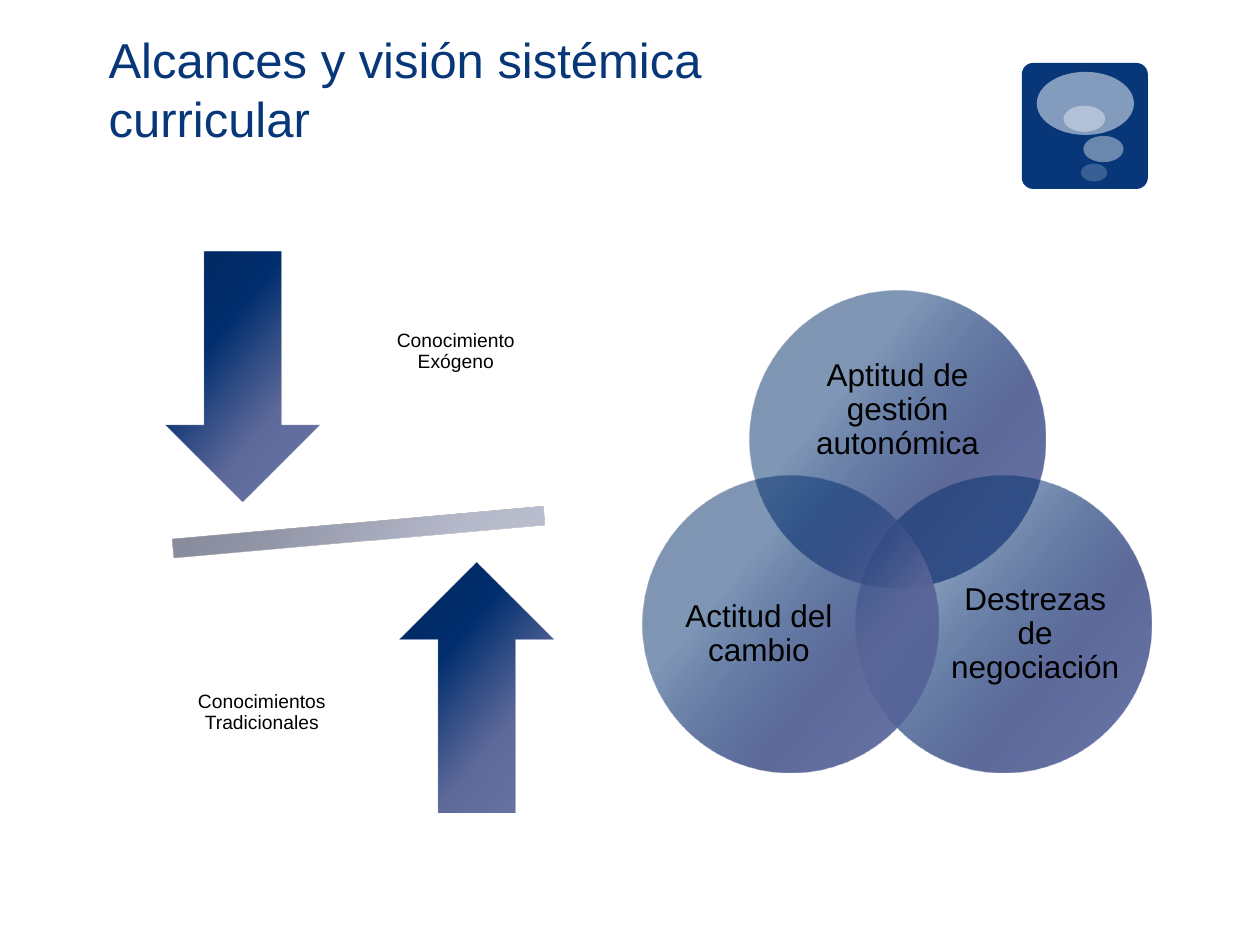
import pptx
import pptx.dml.color
import pptx.enum.shapes
import pptx.enum.text
import pptx.oxml
import pptx.oxml.ns
import pptx.util
from pptx.util import Cm

SHAPE = pptx.enum.shapes.MSO_SHAPE
ALIGN = pptx.enum.text.PP_ALIGN
ANCHOR = pptx.enum.text.MSO_ANCHOR

# Gradient stops: position, colour, opacity (all but the colour in percent)
BLUE = [(0, "52619B", 85), (33, "576396", 95), (67, "002E6E", 100), (100, "00285F", 100)]
GLASS = BLUE[:2] + [(67, "002E6E", 50), (100, "00285F", 50)]
GREY = [(0, "B2B6CA", 85), (33, "B4B7C8", 95), (67, "9094A5", 100), (100, "7C7F8F", 100)]


def rgb(value):
    return pptx.dml.color.RGBColor.from_string(value)


class Deck:
    font = "Arial"
    navy = "073779"
    black = "000000"
    gradient_angle = 220

    def __init__(self, width, height):
        self.prs = pptx.Presentation()
        self.prs.slide_width, self.prs.slide_height = Cm(width), Cm(height)
        self.slide = self.prs.slides.add_slide(self.prs.slide_layouts[5])

    def set_text(self, tf, text, size, color, align, anchor, insets):
        tf.word_wrap = True
        tf.auto_size = pptx.enum.text.MSO_AUTO_SIZE.NONE
        tf.vertical_anchor = anchor
        tf.margin_left, tf.margin_top, tf.margin_right, tf.margin_bottom = map(Cm, insets)
        p = tf.paragraphs[0]
        p.alignment = align
        r = p.add_run()
        r.text = text
        r.font.name, r.font.size = self.font, pptx.util.Pt(size)
        r.font.color.rgb = rgb(color)
        return p

    def title(self, text, *box):
        sp = self.slide.shapes.title
        sp.left, sp.top, sp.width, sp.height = map(Cm, box)
        self.set_text(sp.text_frame, text, 28, self.navy, ALIGN.LEFT, ANCHOR.BOTTOM,
                      (0.13, 0.13, 0.25, 0.13))

    def label(self, text, size, inset, *box):
        sp = self.slide.shapes.add_textbox(*map(Cm, box))
        p = self.set_text(sp.text_frame, text, size, self.black, ALIGN.CENTER,
                          ANCHOR.MIDDLE, [inset] * 4)
        p.line_spacing = 0.9

    def shape(self, kind, *box):
        sp = self.slide.shapes.add_shape(kind, *map(Cm, box))
        sp.shadow.inherit = False
        sp.line.fill.background()
        return sp

    def solid(self, kind, color, opacity, *box):
        sp = self.shape(kind, *box)
        sp.fill.solid()
        sp.fill.fore_color.rgb = rgb(color)
        if opacity < 100:
            clr = sp._element.spPr.find(".//" + pptx.oxml.ns.qn("a:srgbClr"))
            clr.append(pptx.oxml.parse_xml(
                f'<a:alpha {pptx.oxml.ns.nsdecls("a")} val="{opacity * 1000}"/>'))
        return sp

    def gradient(self, kind, stops, *box):
        sp = self.shape(kind, *box)
        gs = "".join(
            f'<a:gs pos="{pos * 1000}"><a:srgbClr val="{color}">'
            f'<a:alpha val="{opacity * 1000}"/></a:srgbClr></a:gs>'
            for pos, color, opacity in stops)
        fill = pptx.oxml.parse_xml(
            f'<a:gradFill {pptx.oxml.ns.nsdecls("a")} rotWithShape="1"><a:gsLst>{gs}</a:gsLst>'
            f'<a:lin ang="{self.gradient_angle * 60000}" scaled="0"/></a:gradFill>')
        sp._element.spPr.find(pptx.oxml.ns.qn("a:prstGeom")).addnext(fill)
        return sp


def draw_icon(deck):
    tile = deck.solid(SHAPE.ROUNDED_RECTANGLE, deck.navy, 100, 20.6, 1.27, 2.54, 2.54)
    tile.adjustments[0] = 0.09
    for opacity, *box in [
        (50, 20.9, 1.45, 1.96, 1.27),
        (40, 21.84, 2.74, 0.81, 0.53),
        (20, 21.79, 3.3, 0.53, 0.36),
        (38, 21.44, 2.13, 0.84, 0.53),
    ]:
        deck.solid(SHAPE.OVAL, "FFFFFF", opacity, *box)


def draw_balance(deck):
    bar = deck.gradient(SHAPE.MATH_MINUS, GREY, 2.13, 9.91, 10.19, 1.63)
    bar.rotation = 355
    for kind, x, y, text, text_x, text_y in [
        (SHAPE.DOWN_ARROW, 3.33, 5.08, "Conocimiento Exógeno", 7.54, 4.45),
        (SHAPE.UP_ARROW, 8.05, 11.35, "Conocimientos Tradicionales", 3.63, 11.73),
    ]:
        deck.gradient(kind, BLUE, x, y, 3.1, 5.03)
        deck.label(text, 11, 0.23, text_x, text_y, 3.3, 5.28)


def draw_venn(deck):
    diameter = 5.97
    for x, y, text, *box in [
        (15.11, 5.87, "Aptitud de gestión autonómica", 15.9, 6.93, 4.39, 2.69),
        (17.25, 9.6, "Destrezas de negociación", 19.08, 11.15, 3.58, 3.28),
        (12.95, 9.6, "Actitud del cambio", 13.51, 11.15, 3.58, 3.28),
    ]:
        deck.gradient(SHAPE.OVAL, GLASS, x, y, diameter, diameter)
        deck.label(text, 18, 0, *box)


def main():
    deck = Deck(25.4, 19.05)
    draw_icon(deck)
    deck.title("Alcances y visión sistémica curricular", 2.06, 0.64, 13.34, 2.46)
    draw_balance(deck)
    draw_venn(deck)
    deck.prs.save("out.pptx")


if __name__ == "__main__":
    main()
